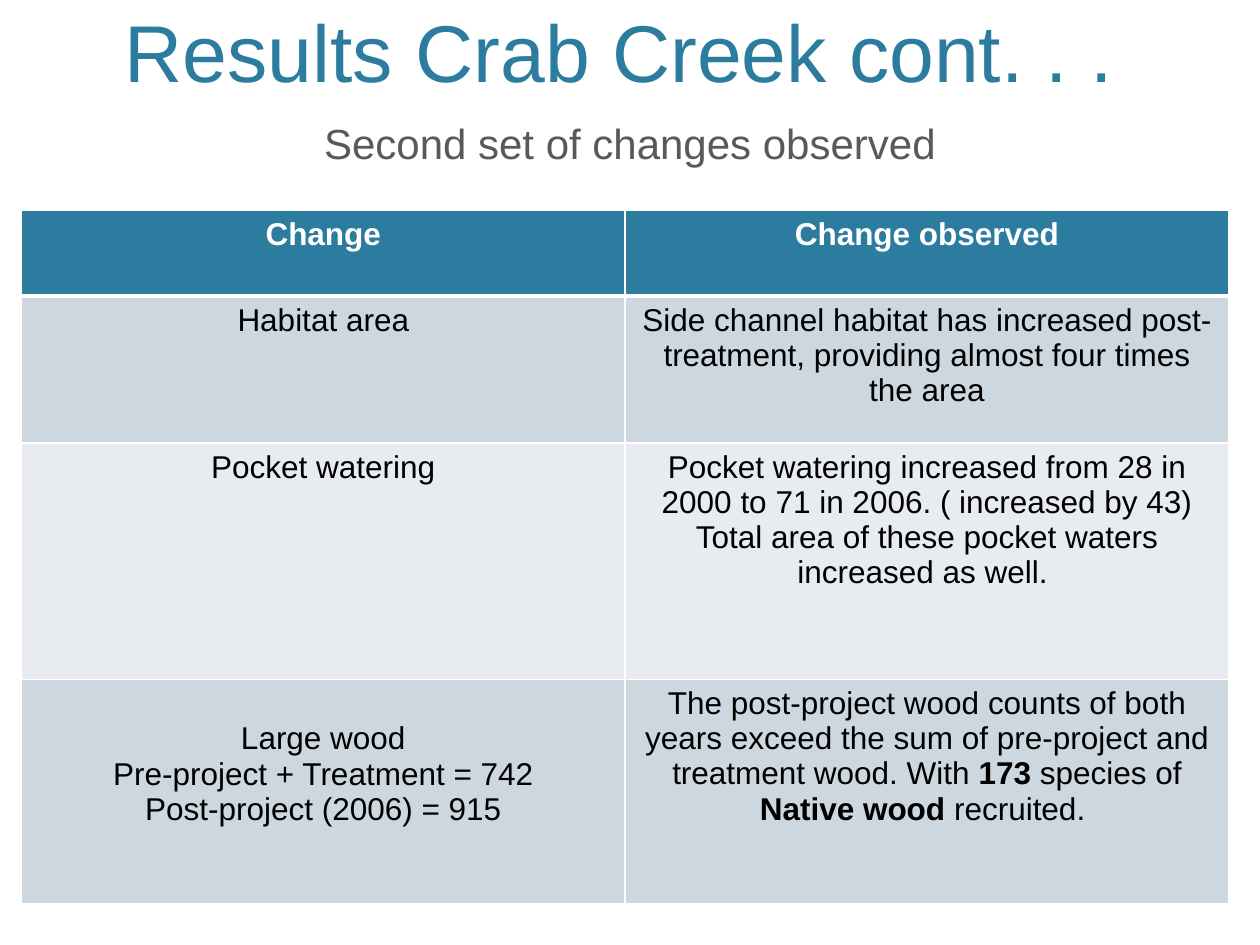
import pptx
import pptx.dml.color
import pptx.enum.text
import pptx.oxml
import pptx.util
from lxml import etree

Pt = pptx.util.Pt
ANCHOR = pptx.enum.text.MSO_ANCHOR
CENTER = pptx.enum.text.PP_ALIGN.CENTER

COLORS = {"teal": "2C7C9F", "gray": "595959", "white": "FFFFFF",
          "black": "000000", "odd": "CDD7DF", "even": "E8ECF0"}
TITLE = "Results Crab Creek cont. . . "
SUBTITLE = "Second set of changes observed"
ROWS = [
    ("Change", "Change observed"),
    ("Habitat area",
     "Side channel habitat has increased post-treatment, providing almost four times the area"),
    ("Pocket watering",
     "Pocket watering increased from 28 in 2000 to 71 in 2006. ( increased by 43) "
     "Total area of these pocket waters increased as well. "),
    ("Large wood\nPre-project + Treatment = 742\nPost-project (2006) = 915",
     "The post-project wood counts of both years exceed the sum of pre-project and "
     "treatment wood. With **173** species of **Native wood** recruited. "),
]
ROW_HEIGHTS = [49, 84, 135, 128]
COL_WIDTH = 345
LEFT, TOP = 12.24, 120.24
WOOD_LABEL_MARGIN = 24


def rgb(name):
    return pptx.dml.color.RGBColor.from_string(COLORS[name])


def write(tf, text, size, color, bold=False):
    for i, line in enumerate(text.split("\n")):
        p = tf.add_paragraph() if i else tf.paragraphs[0]
        p.alignment = CENTER
        p.font.name, p.font.size = "Arial", Pt(size)
        p.font.color.rgb = rgb(color)
        p.font.bold = bold
        for j, part in enumerate(line.split("**")):
            r = p.add_run()
            r.text = part
            if j % 2:
                r.font.bold = True


def set_borders(cell, bottom):
    tcPr = cell._tc.get_or_add_tcPr()
    for i, (side, width) in enumerate([("L", 1), ("R", 1), ("T", 1), ("B", bottom)]):
        ln = etree.Element(pptx.oxml.ns.qn("a:ln" + side), w=str(Pt(width)))
        fill = etree.SubElement(ln, pptx.oxml.ns.qn("a:solidFill"))
        etree.SubElement(fill, pptx.oxml.ns.qn("a:srgbClr"), val=COLORS["white"])
        tcPr.insert(i, ln)


def place(shape, left, top, width, height):
    shape.left, shape.top = Pt(left), Pt(top)
    shape.width, shape.height = Pt(width), Pt(height)


def main():
    prs = pptx.Presentation()
    prs.slide_width, prs.slide_height = Pt(720), Pt(540)
    s = prs.slides.add_slide(prs.slide_layouts[5])

    title = s.shapes.title
    place(title, 43.2, 6, 633.6, 54)
    tf = title.text_frame
    tf.auto_size = pptx.enum.text.MSO_AUTO_SIZE.NONE
    tf.vertical_anchor = ANCHOR.BOTTOM
    write(tf, TITLE, 46, "teal")

    sp = s.shapes.add_textbox(Pt(18), Pt(60), Pt(684), Pt(54))
    sp.text_frame.word_wrap = True
    sp.text_frame.margin_top = Pt(7)
    write(sp.text_frame, SUBTITLE, 24, "gray")

    table = s.shapes.add_table(len(ROWS), 2, Pt(LEFT), Pt(TOP),
                               Pt(2 * COL_WIDTH), Pt(sum(ROW_HEIGHTS))).table
    for col in table.columns:
        col.width = Pt(COL_WIDTH)
    for i, (texts, height) in enumerate(zip(ROWS, ROW_HEIGHTS)):
        table.rows[i].height = Pt(height)
        header = i == 0
        fill = "teal" if header else "odd" if i % 2 else "even"
        for j, text in enumerate(texts):
            cell = table.cell(i, j)
            cell.fill.solid()
            cell.fill.fore_color.rgb = rgb(fill)
            write(cell.text_frame, text, 18, "white" if header else "black", header)
            set_borders(cell, 3 if header else 1)
    table.cell(3, 0).margin_top = Pt(WOOD_LABEL_MARGIN)

    prs.save("out.pptx")


if __name__ == "__main__":
    main()
